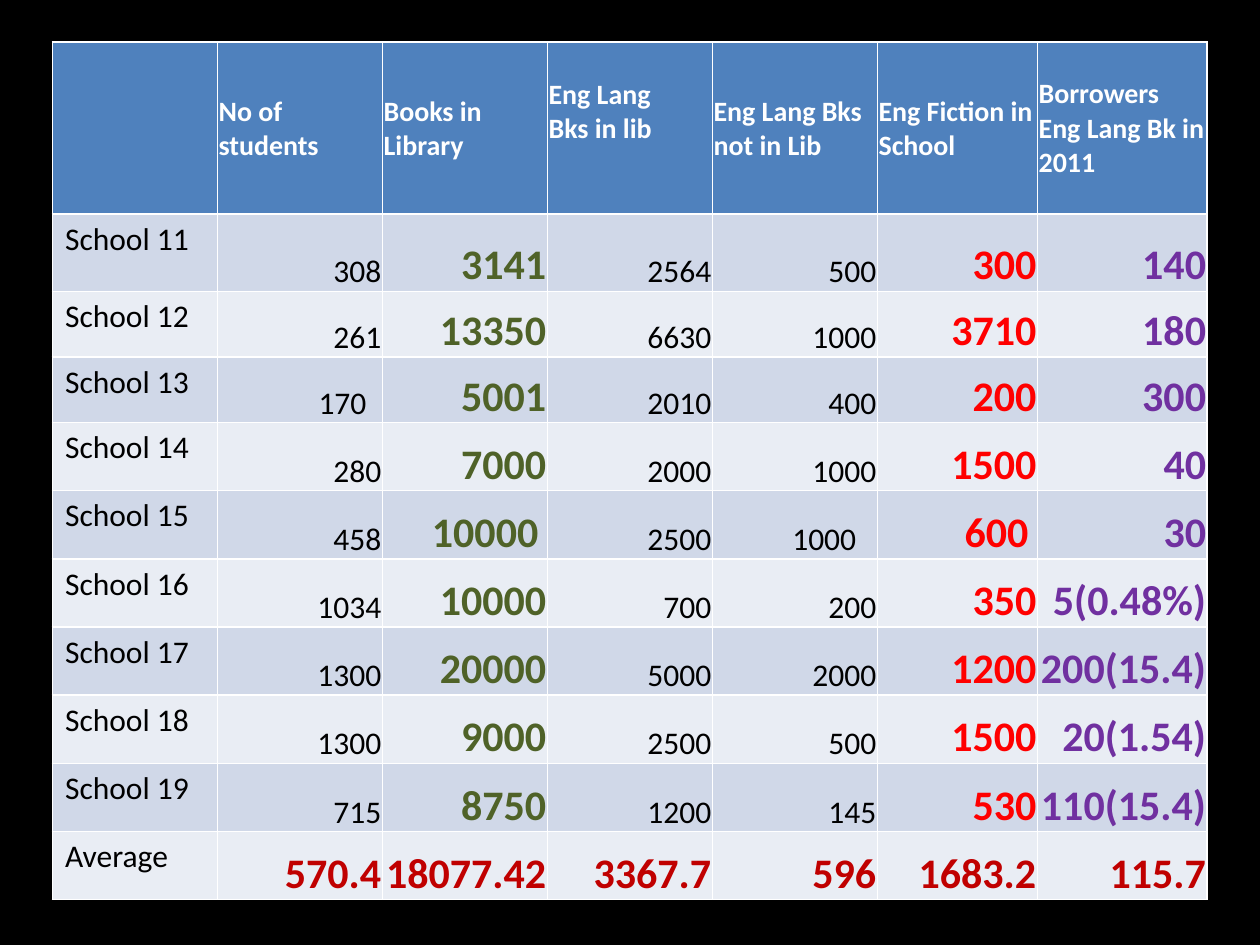
import pptx
import pptx.util
import pptx.dml.color
import pptx.enum.text
import pptx.oxml

Pt = pptx.util.Pt
RGBColor = pptx.dml.color.RGBColor
ALIGN = pptx.enum.text.PP_ALIGN
ANCHOR = pptx.enum.text.MSO_ANCHOR

BLACK = RGBColor(0x00, 0x00, 0x00)
WHITE = RGBColor(0xFF, 0xFF, 0xFF)
BLUE = RGBColor(0x4F, 0x81, 0xBD)
BAND_DARK = RGBColor(0xD0, 0xD8, 0xE8)
BAND_LIGHT = RGBColor(0xE9, 0xED, 0xF4)
GREEN = RGBColor(0x4F, 0x62, 0x28)
RED = RGBColor(0xFF, 0x00, 0x00)
PURPLE = RGBColor(0x70, 0x30, 0xA0)
DARK_RED = RGBColor(0xC0, 0x00, 0x00)

HEADERS = ["", "No of students", "Books in Library", "Eng Lang\nBks in lib",
           "Eng Lang Bks not in Lib", "Eng Fiction in School",
           "Borrowers\nEng Lang Bk in 2011"]
SCHOOLS = [
    ["School 11", "308", "3141", "2564", "500", "300", "140"],
    ["School 12", "261", "13350", "6630", "1000", "3710", "180"],
    ["School 13", "170", "5001", "2010", "400", "200", "300"],
    ["School 14", "280", "7000", "2000", "1000", "1500", "40"],
    ["School 15", "458", "10000", "2500", "1000", "600", "30"],
    ["School 16", "1034", "10000", "700", "200", "350", "5(0.48%)"],
    ["School 17", "1300", "20000", "5000", "2000", "1200", "200(15.4)"],
    ["School 18", "1300", "9000", "2500", "500", "1500", "20(1.54)"],
    ["School 19", "715", "8750", "1200", "145", "530", "110(15.4)"],
]
AVERAGE = ["Average", "570.4", "18077.42", "3367.7", "596", "1683.2", "115.7"]
COLUMN_WIDTHS = [94.3] * 5 + [91.5, 97]
ROW_HEIGHTS = [98.3, 44.2, 37.5, 37.5] + [38.95] * 7
COLUMN_COLORS = {2: GREEN, 5: RED, 6: PURPLE}
RIGHT_INSETS = {(3, 1): 9.2, (5, 2): 5.2, (5, 4): 12.2, (5, 5): 5.2}
HEADER_BOTTOM_INSETS = {3: 19.5}


def write_text(tf, text, size=18, color=BLACK, bold=False, align=ALIGN.LEFT):
    """Write one formatted paragraph for each line of text."""
    for i, line in enumerate(text.split("\n")):
        p = tf.add_paragraph() if i else tf.paragraphs[0]
        p.alignment = align
        if not line:
            continue
        r = p.add_run()
        r.text = line
        r.font.name = "Calibri"
        r.font.size = Pt(size)
        r.font.bold = bold
        r.font.color.rgb = color


def set_borders(cell, color=WHITE, width=1):
    """Draw a solid line on all four sides of a cell."""
    props = cell._tc.get_or_add_tcPr()
    for i, side in enumerate(("lnL", "lnR", "lnT", "lnB")):
        props.insert(i, pptx.oxml.parse_xml(
            f'<a:{side} xmlns:a="http://schemas.openxmlformats.org/drawingml/2006/main" '
            f'w="{Pt(width)}"><a:solidFill><a:srgbClr val="{color}"/></a:solidFill></a:{side}>'))


def style_cell(cell, fill, anchor, insets):
    """Set the fill, borders, anchor and insets (left, top, right, bottom)."""
    cell.fill.solid()
    cell.fill.fore_color.rgb = fill
    set_borders(cell)
    cell.vertical_anchor = anchor
    (cell.margin_left, cell.margin_top,
     cell.margin_right, cell.margin_bottom) = map(Pt, insets)


def fill_header(table):
    """Fill the header row."""
    for col, text in enumerate(HEADERS):
        cell = table.cell(0, col)
        style_cell(cell, BLUE, ANCHOR.MIDDLE,
                   (0.7, 0.7, 0.7, HEADER_BOTTOM_INSETS.get(col, 0)))
        write_text(cell.text_frame, text, size=16, color=WHITE, bold=True)


def fill_body(table):
    """Fill the school rows and the average row."""
    for row, values in enumerate(SCHOOLS + [AVERAGE], start=1):
        band = BAND_DARK if row % 2 else BAND_LIGHT
        for col, text in enumerate(values):
            cell = table.cell(row, col)
            if col == 0:
                style_cell(cell, band, ANCHOR.TOP, (7.2, 3.6, 7.2, 3.6))
                write_text(cell.text_frame, text)
                continue
            right = RIGHT_INSETS.get((row, col), 0.7)
            style_cell(cell, band, ANCHOR.BOTTOM, (0.7, 0.7, right, 0))
            color = DARK_RED if values is AVERAGE else COLUMN_COLORS.get(col, BLACK)
            strong = color != BLACK
            write_text(cell.text_frame, text, size=24 if strong else 18,
                       color=color, bold=strong, align=ALIGN.RIGHT)


def add_library_table(s, left, top):
    """Add the table of school library figures at the given corner."""
    table = s.shapes.add_table(
        len(ROW_HEIGHTS), len(COLUMN_WIDTHS), Pt(left), Pt(top),
        Pt(sum(COLUMN_WIDTHS)), Pt(sum(ROW_HEIGHTS))).table
    for column, width in zip(table.columns, COLUMN_WIDTHS):
        column.width = Pt(width)
    for row, height in zip(table.rows, ROW_HEIGHTS):
        row.height = Pt(height)
    fill_header(table)
    fill_body(table)


def main():
    """Build the slide and save it."""
    prs = pptx.Presentation()
    prs.slide_width, prs.slide_height = Pt(720), Pt(540)
    s = prs.slides.add_slide(prs.slide_layouts[6])
    s.background.fill.solid()
    s.background.fill.fore_color.rgb = BLACK
    add_library_table(s, left=30, top=24)
    prs.save("out.pptx")


if __name__ == "__main__":
    main()
